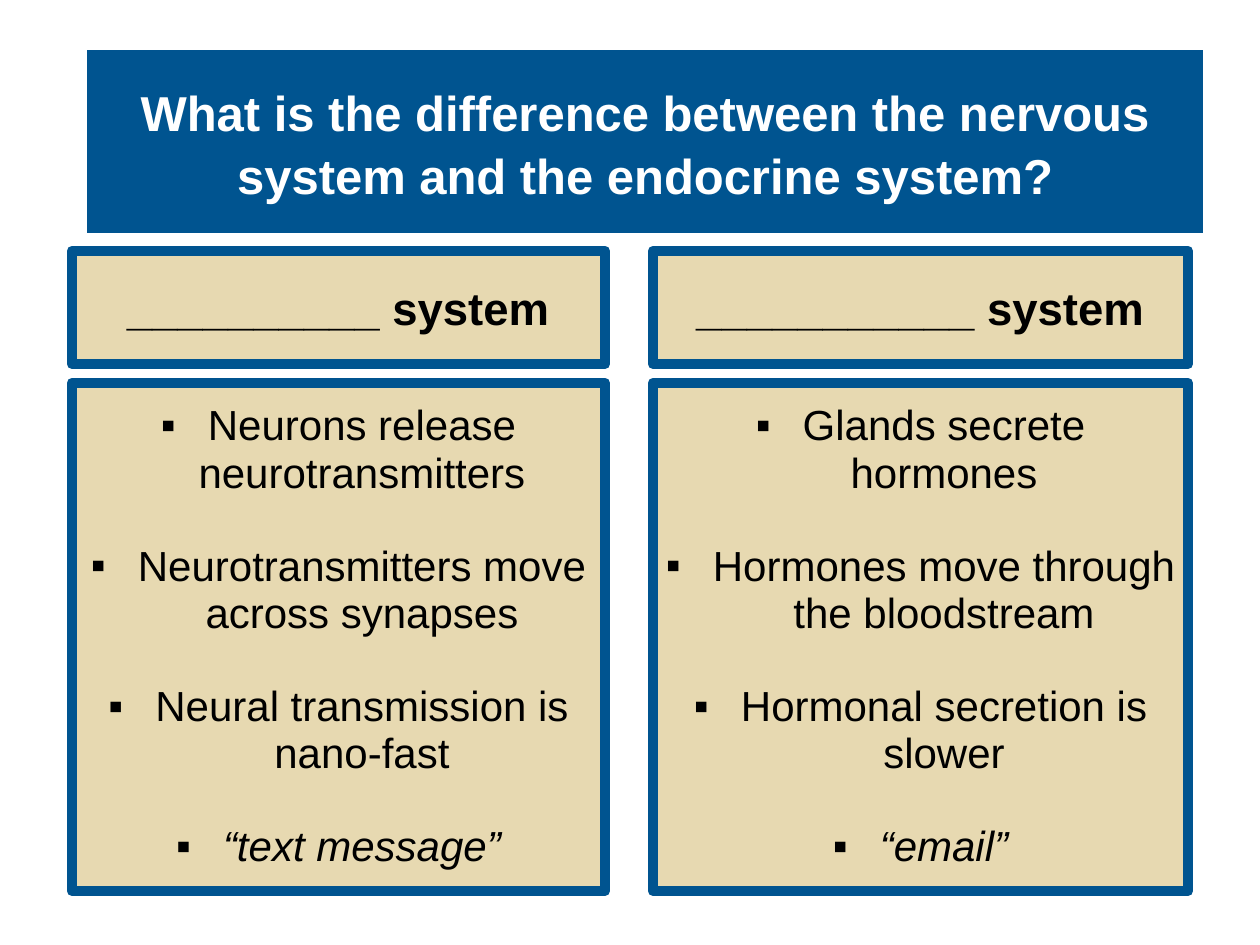
from lxml.etree import SubElement
from pptx import Presentation
from pptx.dml.color import RGBColor
from pptx.enum.shapes import MSO_SHAPE
from pptx.enum.text import MSO_ANCHOR, PP_ALIGN
from pptx.oxml.ns import qn
from pptx.util import Pt

PX = 914400 // 126
COLORS = {"blue": "005490", "sand": "E7D9B1", "white": "FFFFFF", "black": "000000"}
TITLE = "What is the difference between the nervous system and the endocrine system?"
COLUMNS = [
    {
        "left": 72, "width": 533,
        "heading": "__________ system",
        "points": ["Neurons release neurotransmitters",
                   "Neurotransmitters move across synapses",
                   "Neural transmission is nano-fast"],
        "analogy": "“text message”",
    },
    {
        "left": 653, "width": 535,
        "heading": "___________ system",
        "points": ["Glands secrete hormones",
                   "Hormones move through the bloodstream",
                   "Hormonal secretion is slower"],
        "analogy": "“email”",
    },
]
TITLE_BOX = (87, 50, 1116, 183)
HEADING_TOP, HEADING_HEIGHT = 251, 113
BODY_TOP, BODY_HEIGHT = 383, 508
INDENT = 47


def color(name):
    return RGBColor.from_string(COLORS[name])


def add_panel(page, bounds, fill, outlined=True):
    box = page.shapes.add_shape(MSO_SHAPE.RECTANGLE, *(value * PX for value in bounds))
    box.shadow.inherit = False
    box.fill.solid()
    box.fill.fore_color.rgb = color(fill)
    if outlined:
        box.line.color.rgb = color("blue")
        box.line.width = Pt(6)
        SubElement(box.line._get_or_add_ln(), qn("a:round"))
    else:
        box.line.fill.background()
    box.text_frame.word_wrap = True
    box.text_frame.vertical_anchor = MSO_ANCHOR.MIDDLE
    return box.text_frame


def write(para, text, size, ink="black", bold=False, italic=False):
    para.text = text
    para.alignment = PP_ALIGN.CENTER
    font = para.font
    font.name, font.size = "Arial", Pt(size)
    font.bold, font.italic = bold, italic
    font.color.rgb = color(ink)


def add_bullet(para):
    properties = para._p.get_or_add_pPr()
    properties.set("marL", str(INDENT * PX))
    properties.set("indent", str(-INDENT * PX))
    SubElement(properties, qn("a:buFont"), typeface="Arial")
    SubElement(properties, qn("a:buChar"), char="▪")


def add_column(page, column):
    left, width = column["left"], column["width"]
    heading = add_panel(page, (left, HEADING_TOP, width, HEADING_HEIGHT), "sand")
    write(heading.paragraphs[0], column["heading"], 26, bold=True)

    body = add_panel(page, (left, BODY_TOP, width, BODY_HEIGHT), "sand")
    items = column["points"] + [column["analogy"]]
    for index, text in enumerate(items):
        para = body.add_paragraph() if index else body.paragraphs[0]
        add_bullet(para)
        write(para, text, 24, italic=text == column["analogy"])
        para.line_spacing = 0.94
        if index:
            para.space_before = Pt(26)


deck = Presentation()
deck.slide_width, deck.slide_height = 1260 * PX, 945 * PX
page = deck.slides.add_slide(deck.slide_layouts[6])
title = add_panel(page, TITLE_BOX, "blue", outlined=False)
write(title.paragraphs[0], TITLE, 28, "white", bold=True)
title.paragraphs[0].line_spacing = 1.06
for column in COLUMNS:
    add_column(page, column)
deck.save("out.pptx")
